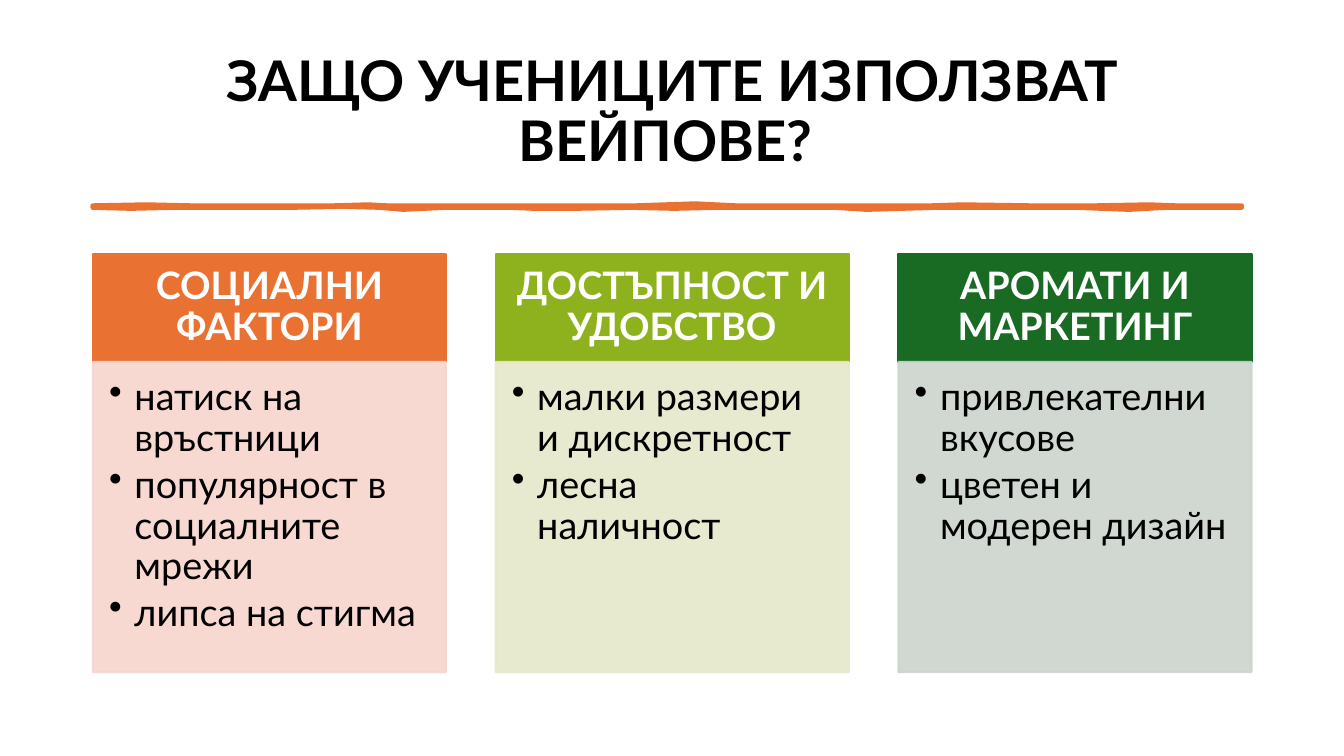
from dataclasses import dataclass

from lxml.etree import SubElement
from pptx import Presentation
from pptx.dml.color import RGBColor
from pptx.enum.shapes import MSO_SHAPE
from pptx.enum.text import MSO_ANCHOR, PP_ALIGN
from pptx.oxml.ns import qn
from pptx.shapes.autoshape import Shape
from pptx.slide import Slide
from pptx.util import Cm, Pt

FONT = "Lato"
BLACK, WHITE, ORANGE = "000000", "FFFFFF", "E97132"
LEFT, WIDTH, PITCH = 2.34, 8.9, 10.15
HEAD_TOP, HEAD_HIGH = 6.4, 2.72
BODY_HIGH = 7.82


@dataclass
class Column:
    title: str
    points: list[str]
    dark: str
    pale: str


COLUMNS = [
    Column("СОЦИАЛНИ ФАКТОРИ",
           ["натиск на връстници", "популярност в социалните мрежи",
            "липса на стигма"], ORANGE, "F7D5CE"),
    Column("ДОСТЪПНОСТ И УДОБСТВО",
           ["малки размери и дискретност", "лесна наличност"],
           "8EB21E", "E5E8CA"),
    Column("АРОМАТИ И МАРКЕТИНГ",
           ["привлекателни вкусове", "цветен и модерен дизайн"],
           "196B24", "CCD4CD"),
]

# Upper and lower edges of the brush stroke, in inches, as (x, y)
UPPER = [(0.92, 2.04), (1.45, 2.03), (1.9, 2.04), (2.44, 2.04), (3.31, 2.04),
         (3.65, 2.03), (3.84, 2.04), (4.6, 2.04), (5.0, 2.04), (5.48, 2.04),
         (5.89, 2.04), (6.31, 2.04), (6.9, 2.02), (7.3, 2.04), (7.76, 2.04),
         (8.06, 2.04), (8.48, 2.04), (9.24, 2.04), (9.55, 2.03), (10.23, 2.04),
         (10.87, 2.04), (11.4, 2.03), (11.67, 2.04), (12.32, 2.04)]
LOWER = [(12.32, 2.06), (11.56, 2.06), (11.2, 2.08), (10.68, 2.06),
         (9.81, 2.06), (9.28, 2.06), (8.6, 2.08), (8.29, 2.06), (7.53, 2.06),
         (7.11, 2.06), (6.69, 2.07), (6.27, 2.06), (5.7, 2.07), (5.3, 2.07),
         (5.06, 2.06), (4.41, 2.06), (4.0, 2.08), (3.77, 2.06), (3.4, 2.05),
         (2.89, 2.06), (2.13, 2.06), (1.71, 2.06), (1.3, 2.07), (0.92, 2.06)]


def paint(shape: Shape, color: str, line: float, alpha: int = 100) -> None:
    """Give fill and outline one colour, with opacity in percent."""
    shape.shadow.inherit = False
    shape.fill.solid()
    shape.fill.fore_color.rgb = RGBColor.from_string(color)
    shape.line.color.rgb = RGBColor.from_string(color)
    shape.line.width = Pt(line)
    if alpha < 100:
        for node in shape.element.spPr.iter(qn("a:srgbClr")):
            SubElement(node, qn("a:alpha")).set("val", str(alpha * 1000))


def write(shape: Shape, lines: list[str], size: float, color: str, bold: bool,
          inset: tuple[float, float, float, float], after: float = 0,
          bullet: bool = False) -> None:
    """Fill in text; insets run left, top, right, bottom in centimetres."""
    frame = shape.text_frame
    frame.word_wrap = True
    frame.vertical_anchor = MSO_ANCHOR.TOP if bullet else MSO_ANCHOR.MIDDLE
    frame.margin_left, frame.margin_top, frame.margin_right, \
        frame.margin_bottom = map(Cm, inset)
    frame.text = "\n".join(lines)
    for para in frame.paragraphs:
        para.alignment = PP_ALIGN.LEFT if bullet else PP_ALIGN.CENTER
        para.line_spacing = 0.9
        para.space_after = Pt(after)
        para.font.name, para.font.size, para.font.bold = FONT, Pt(size), bold
        para.font.color.rgb = RGBColor.from_string(color)
        if bullet:
            props = para._p.get_or_add_pPr()
            props.set("marL", str(Cm(0.64)))
            props.set("indent", str(-Cm(0.64)))
            mark = props.makeelement(qn("a:buChar"), {"char": "•"})
            props.insert_element_before(mark, "a:tabLst", "a:defRPr")


def box(slide: Slide, left: float, top: float, high: float) -> Shape:
    return slide.shapes.add_shape(MSO_SHAPE.RECTANGLE, Cm(left), Cm(top),
                                  Cm(WIDTH), Cm(high))


def stroke(slide: Slide) -> None:
    edge = [(Cm(x * 2.54), Cm(y * 2.54)) for x, y in UPPER + LOWER]
    pen = slide.shapes.build_freeform(*edge[0])
    pen.add_line_segments(edge[1:], close=True)
    paint(pen.convert_to_shape(), ORANGE, 3.25)


def column(slide: Slide, left: float, data: Column) -> None:
    head = box(slide, left, HEAD_TOP, HEAD_HIGH)
    paint(head, data.dark, 1.5)
    write(head, [data.title], 27, WHITE, True, (0.5, 0.3, 0.5, 0.3))
    body = box(slide, left, HEAD_TOP + HEAD_HIGH, BODY_HIGH)
    paint(body, data.pale, 1.5, 90)
    write(body, data.points, 27, BLACK, False, (0.41, 0.41, 0.53, 0.61),
          after=4, bullet=True)


def main() -> None:
    deck = Presentation()
    deck.slide_width, deck.slide_height = Cm(33.87), Cm(19.05)
    slide = deck.slides.add_slide(deck.slide_layouts[6])
    title = slide.shapes.add_textbox(Cm(LEFT), Cm(1.02), Cm(29.2), Cm(3.68))
    write(title, ["ЗАЩО УЧЕНИЦИТЕ ИЗПОЛЗВАТ ВЕЙПОВЕ? "], 40, BLACK, True,
          (0.25, 0.13, 0.25, 0.13))
    stroke(slide)
    for i, data in enumerate(COLUMNS):
        column(slide, LEFT + i * PITCH, data)
    deck.save("out.pptx")


if __name__ == "__main__":
    main()
